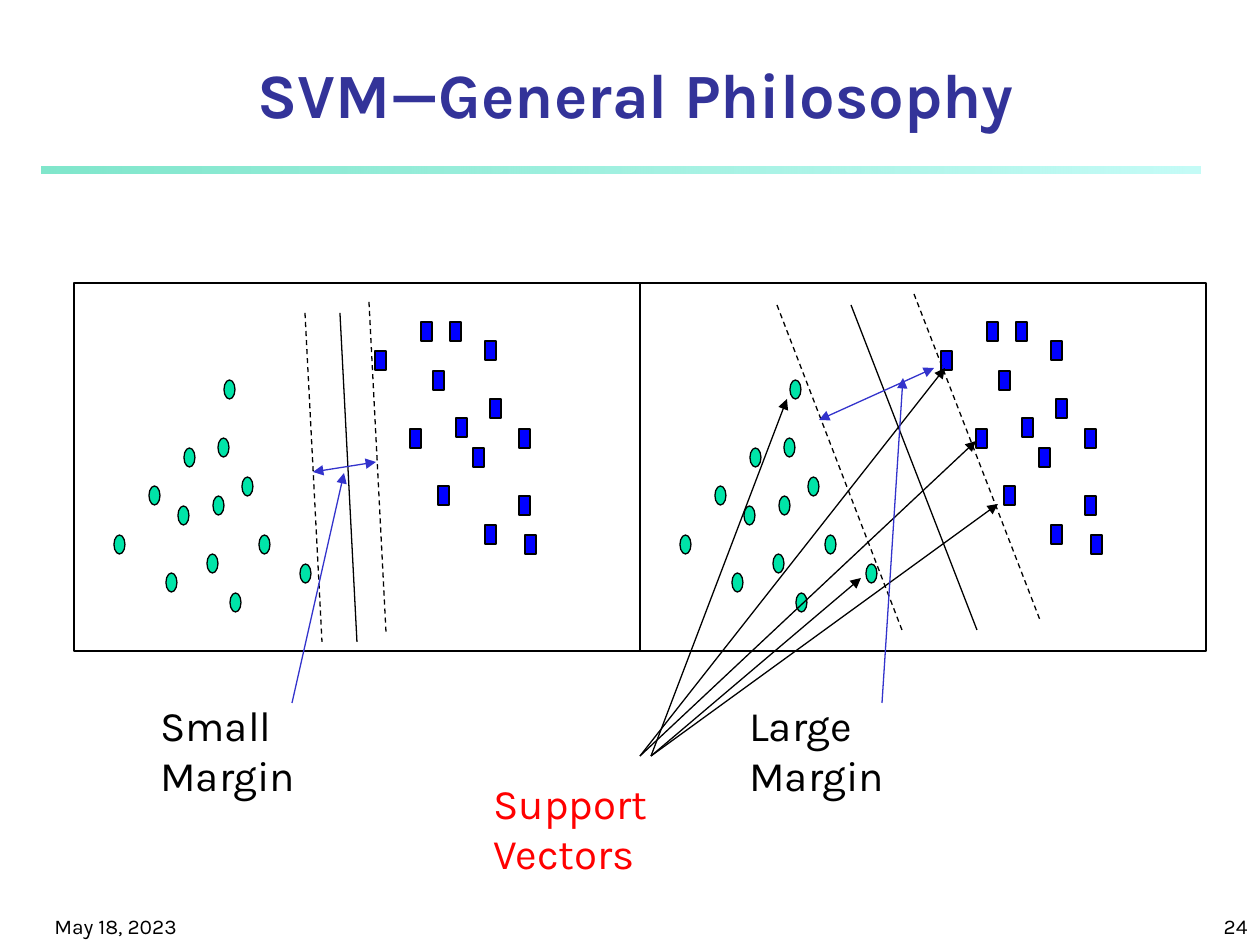
from typing import NamedTuple

from pptx import Presentation
from pptx.dml.color import RGBColor
from pptx.enum.dml import MSO_LINE
from pptx.enum.shapes import MSO_CONNECTOR, MSO_SHAPE
from pptx.enum.text import MSO_ANCHOR, MSO_AUTO_SIZE, PP_ALIGN
from pptx.oxml.ns import qn
from pptx.util import Emu, Inches, Pt
from lxml.etree import SubElement

SCALE = 914400 / 126  # EMU in one px
FACE = "Karla"
BLACK, NAVY, RED, INDIGO = "000000", "333399", "FF0000", "3333CC"
GREEN, BLUE = "00E4A8", "0000FF"


class Box(NamedTuple):
    left: int
    top: int
    width: int
    height: int


class Rule(NamedTuple):
    x1: int
    y1: int
    x2: int
    y2: int
    color: str = BLACK
    dash: bool = False
    head: bool = False
    tail: bool = False


class Label(NamedTuple):
    text: str
    box: Box
    size: int = 24
    color: str = BLACK
    align: PP_ALIGN = PP_ALIGN.LEFT
    anchor: MSO_ANCHOR = MSO_ANCHOR.TOP
    bold: bool = False


def px(n: int) -> Emu:
    return Emu(round(n * SCALE))


def rgb(code: str) -> RGBColor:
    return RGBColor.from_string(code)


def place(box: Box) -> list[Emu]:
    return [px(n) for n in box]


def draw_shape(shapes, kind: MSO_SHAPE, box: Box, fill: str = ""):
    shape = shapes.add_shape(kind, *place(box))
    shape.shadow.inherit = False
    if fill:
        shape.fill.solid()
        shape.fill.fore_color.rgb = rgb(fill)
    else:
        shape.fill.background()
    shape.line.color.rgb = rgb(BLACK)
    shape.line.width = Pt(0.75)
    return shape


def draw_rule(shapes, rule: Rule) -> None:
    link = shapes.add_connector(MSO_CONNECTOR.STRAIGHT, *(px(n) for n in rule[:4]))
    link.line.color.rgb = rgb(rule.color)
    link.line.width = Pt(0.75)
    if rule.dash:
        link.line.dash_style = MSO_LINE.DASH
    props = link._element.spPr
    for tag, shown in (("a:headEnd", rule.head), ("a:tailEnd", rule.tail)):
        if shown:
            SubElement(props.find(qn("a:ln")), qn(tag), type="triangle")
    SubElement(props, qn("a:effectLst"))


def write(shape, label: Label) -> None:
    frame = shape.text_frame
    look = {"word_wrap": True, "auto_size": MSO_AUTO_SIZE.NONE,
            "vertical_anchor": label.anchor}
    for name, value in look.items():
        setattr(frame, name, value)
    para = frame.paragraphs[0]
    para.alignment = label.align
    run = para.add_run()
    run.text = label.text
    style = {"name": FACE, "size": Pt(label.size), "bold": label.bold}
    for name, value in style.items():
        setattr(run.font, name, value)
    run.font.color.rgb = rgb(label.color)


def draw_label(shapes, label: Label) -> None:
    write(shapes.add_textbox(*place(label.box)), label)


def draw_bar(shapes, box: Box) -> None:
    bar = draw_shape(shapes, MSO_SHAPE.RECTANGLE, box)
    bar.line.fill.background()
    bar.fill.gradient()
    bar.fill.gradient_angle = 0
    for stop, code, alpha in zip(bar.fill.gradient_stops,
                                 ("00CE98", "8FF9EF"), ("50000", "52000")):
        stop.color.rgb = rgb(code)
        tint = bar._element.spPr.find(f".//{qn('a:srgbClr')}[@val='{code}']")
        SubElement(tint, qn("a:alpha"), val=alpha)


# Both panels show the same points, one panel width apart
PANEL = Box(74, 283, 566, 368)
DOTS = [(166, 573), (178, 506), (114, 535), (149, 486), (207, 554), (184, 448),
        (213, 496), (218, 438), (242, 477), (259, 535), (230, 593), (300, 564),
        (224, 380)]
TILES = [(410, 429), (375, 351), (421, 322), (438, 486), (433, 371), (456, 418),
         (450, 322), (485, 341), (473, 448), (490, 399), (485, 525), (519, 429),
         (519, 496), (525, 535)]
SETS = [(MSO_SHAPE.OVAL, GREEN, DOTS), (MSO_SHAPE.RECTANGLE, BLUE, TILES)]

# Separating line and its two dashed margins, per panel
SMALL = [Rule(369, 302, 386, 632, dash=True), Rule(305, 313, 322, 642, dash=True),
         Rule(340, 313, 357, 642)]
LARGE = [Rule(777, 305, 902, 630, dash=True), Rule(914, 294, 1040, 620, dash=True),
         Rule(851, 305, 977, 630)]

# Each caption with the arrows that belong to it
NOTES = [
    (Label("Support Vectors", Box(481, 771, 318, 63), color=RED),
     [Rule(640, 756, 945, 368, tail=True), Rule(640, 756, 976, 441, tail=True),
      Rule(651, 756, 998, 504, tail=True), Rule(651, 756, 861, 578, tail=True),
      Rule(651, 756, 787, 399, tail=True)]),
    (Label("Small Margin", Box(148, 693, 262, 63)),
     [Rule(313, 472, 376, 462, INDIGO, head=True, tail=True),
      Rule(292, 703, 344, 473, INDIGO, tail=True)]),
    (Label("Large Margin", Box(737, 693, 262, 63)),
     [Rule(819, 420, 934, 368, INDIGO, head=True, tail=True),
      Rule(882, 703, 903, 378, INDIGO, tail=True)]),
]

TITLE = Label("SVM—General Philosophy", Box(42, 53, 1187, 84), 36, NAVY,
              PP_ALIGN.CENTER, MSO_ANCHOR.BOTTOM, True)
FOOT = [Label("May 18, 2023", Box(42, 892, 262, 53), 12, anchor=MSO_ANCHOR.BOTTOM),
        Label("24", Box(998, 892, 262, 53), 12, align=PP_ALIGN.RIGHT,
              anchor=MSO_ANCHOR.BOTTOM)]


def draw_panel(shapes, shift: int, rules: list[Rule]) -> None:
    for kind, fill, spots in SETS:
        for left, top in spots:
            draw_shape(shapes, kind, Box(left + shift, top, 11, 19), fill)
    draw_shape(shapes, MSO_SHAPE.RECTANGLE, PANEL._replace(left=PANEL.left + shift))
    for rule in rules:
        draw_rule(shapes, rule)


def main() -> None:
    deck = Presentation()
    deck.slide_width, deck.slide_height = Inches(10), Inches(7.5)
    slide = deck.slides.add_slide(deck.slide_layouts[5])
    shapes = slide.shapes

    # Title, bar and footer
    title = shapes.title
    for name, value in zip(("left", "top", "width", "height"), place(TITLE.box)):
        setattr(title, name, value)
    write(title, TITLE)
    draw_bar(shapes, Box(42, 167, 1159, 7))
    for label in FOOT:
        draw_label(shapes, label)

    # Panels
    for place_no, rules in enumerate((SMALL, LARGE)):
        draw_panel(shapes.add_group_shape().shapes, place_no * PANEL.width, rules)

    # Captions with arrows
    for label, rules in NOTES:
        group = shapes.add_group_shape().shapes
        draw_label(group, label)
        for rule in rules:
            draw_rule(group, rule)

    deck.save("out.pptx")


if __name__ == "__main__":
    main()
